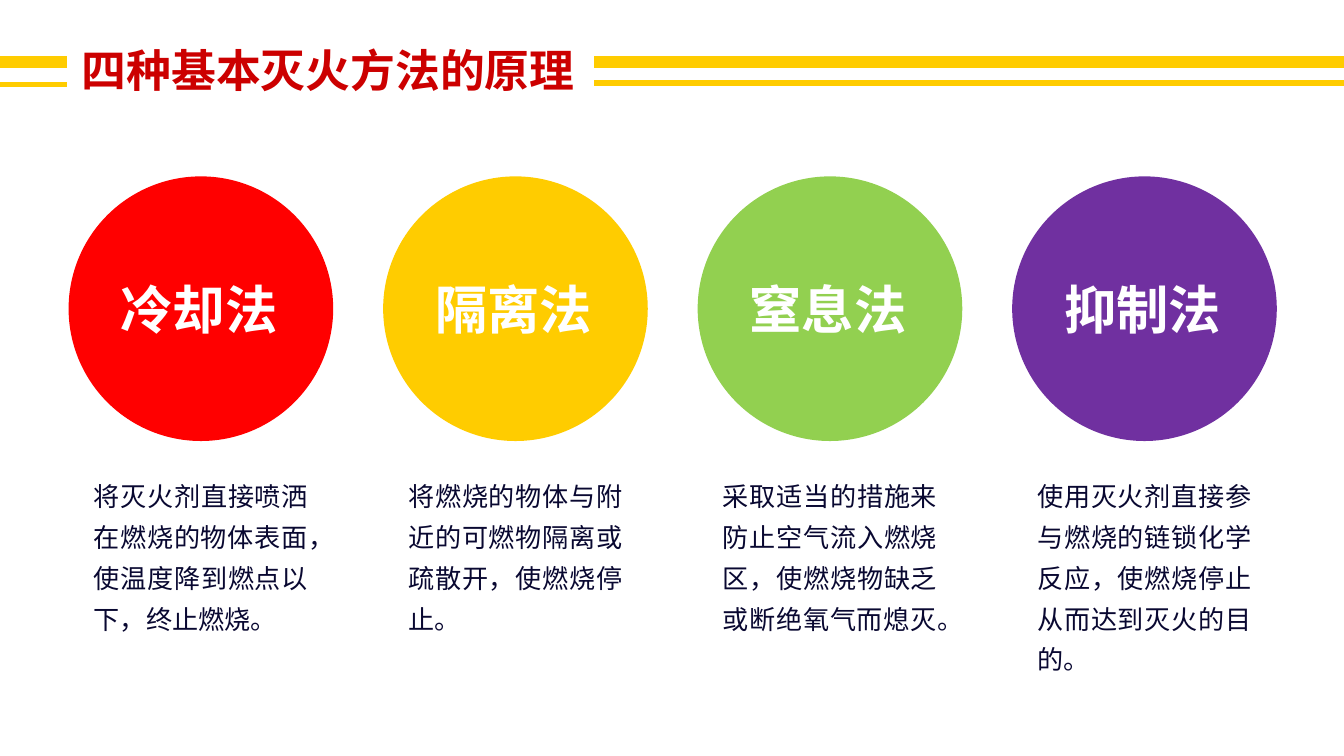
from dataclasses import dataclass

from lxml.etree import SubElement
from pptx import Presentation
from pptx.dml.color import RGBColor as RGB
from pptx.enum.shapes import MSO_CONNECTOR as Connector, MSO_SHAPE as Preset
from pptx.enum.text import MSO_ANCHOR as Anchor, MSO_AUTO_SIZE as AutoSize, PP_ALIGN as Align
from pptx.oxml.ns import qn
from pptx.util import Pt


@dataclass(frozen=True)
class Theme:
    latin: str = "Arial"
    chinese: str = "Noto Sans CJK SC"
    title: str = "CC0000"
    stripe: str = "FFCC00"
    label: str = "FFFFFF"
    body: str = "090831"
    title_size: float = 24
    label_size: float = 28
    body_size: float = 14


class SlideBuilder:
    def __init__(self, slide, theme):
        self.slide = slide
        self.theme = theme

    def group(self):
        return self.slide.shapes.add_group_shape().shapes

    def circle(self, shapes, left, top, diameter, color):
        circle = shapes.add_shape(Preset.OVAL, Pt(left), Pt(top), Pt(diameter), Pt(diameter))
        circle.shadow.inherit = False
        circle.fill.solid()
        circle.fill.fore_color.rgb = RGB.from_string(color)
        circle.line.fill.background()

    def text(self, shapes, box, words, color, font, frame=None, paragraph=None):
        text_frame = shapes.add_textbox(*map(Pt, box)).text_frame
        line = text_frame.paragraphs[0]
        run = line.add_run()
        run.text = words
        run.font.color.rgb = RGB.from_string(color)
        formats = (
            (text_frame, {"word_wrap": True, **(frame or {})}),
            (line, paragraph or {}),
            (run.font, font),
        )
        for target, values in formats:
            for name, value in values.items():
                setattr(target, name, value)
        # Chinese glyphs take the East Asian typeface
        SubElement(run.font._element, qn("a:ea"), typeface=self.theme.chinese)

    def stripe(self, shapes, start, end, y, weight):
        stripe = shapes.add_connector(Connector.STRAIGHT, Pt(start), Pt(y), Pt(end), Pt(y))
        stripe.line.color.rgb = RGB.from_string(self.theme.stripe)
        stripe.line.width = Pt(weight)
        SubElement(stripe._element.spPr, qn("a:effectLst"))


SLIDE_WIDTH, SLIDE_HEIGHT = 720, 405
FIRST_LEFT, COLUMN_STEP = 36.75, 168.5
CIRCLE_TOP, DIAMETER = 94.5, 141.75
LABEL_WIDTH, LABEL_TOP, LABEL_HEIGHT = 100, 144.75, 41
BODY_WIDTH, BODY_TOP, BODY_HEIGHT = 129, 249, 96

METHODS = [
    ("冷却法", "FF0000", "将灭火剂直接喷洒在燃烧的物体表面，使温度降到燃点以下，终止燃烧。"),
    ("隔离法", "FFCC00", "将燃烧的物体与附近的可燃物隔离或疏散开，使燃烧停止。"),
    ("窒息法", "92D050", "采取适当的措施来防止空气流入燃烧区，使燃烧物缺乏或断绝氧气而熄灭。"),
    ("抑制法", "7030A0", "使用灭火剂直接参与燃烧的链锁化学反应，使燃烧停止从而达到灭火的目的。"),
]


def main():
    deck = Presentation()
    deck.slide_width, deck.slide_height = Pt(SLIDE_WIDTH), Pt(SLIDE_HEIGHT)
    slide = deck.slides.add_slide(deck.slide_layouts[6])
    theme = Theme()
    builder = SlideBuilder(slide, theme)

    # Title
    builder.text(
        slide.shapes, (36.75, 12.5, 330, 49.5), "四种基本灭火方法的原理", theme.title,
        {"name": theme.chinese, "size": Pt(theme.title_size), "bold": True},
        {"vertical_anchor": Anchor.MIDDLE},
    )

    # One circle, label and explanation per method
    label_font = {"name": theme.latin, "size": Pt(theme.label_size), "bold": True}
    body_font = {"name": theme.latin, "size": Pt(theme.body_size)}
    for column, (method, color, principle) in enumerate(METHODS):
        left = FIRST_LEFT + column * COLUMN_STEP
        center = left + DIAMETER / 2
        badge = builder.group()
        builder.circle(badge, left, CIRCLE_TOP, DIAMETER, color)
        builder.text(
            badge, (center - LABEL_WIDTH / 2, LABEL_TOP, LABEL_WIDTH, LABEL_HEIGHT),
            method, theme.label, label_font,
            {"word_wrap": False, "auto_size": AutoSize.SHAPE_TO_FIT_TEXT},
        )
        builder.text(
            slide.shapes, (center - BODY_WIDTH / 2, BODY_TOP, BODY_WIDTH, BODY_HEIGHT),
            principle, theme.body, body_font,
            {"auto_size": AutoSize.SHAPE_TO_FIT_TEXT},
            {"alignment": Align.JUSTIFY, "line_spacing": 1.3},
        )

    # Double stripes on both sides of the title
    for start, end, thin_y in ((318.25, SLIDE_WIDTH, 44.5), (0, 36, 45.25)):
        stripes = builder.group()
        builder.stripe(stripes, start, end, 33.25, 6)
        builder.stripe(stripes, start, end, thin_y, 3)

    deck.save("out.pptx")


if __name__ == "__main__":
    main()
